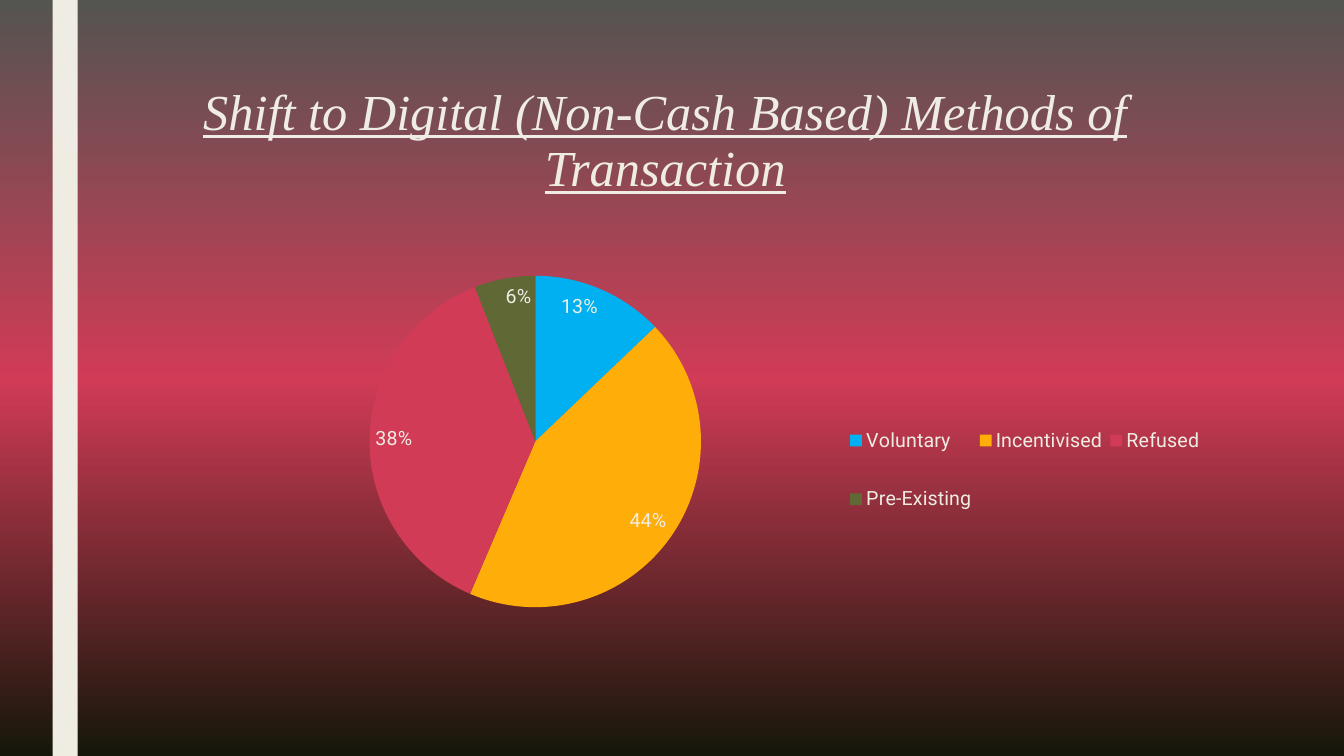
from copy import deepcopy
from dataclasses import dataclass

from lxml import etree
from pptx import Presentation
from pptx import util as u
from pptx.chart.data import CategoryChartData
from pptx.dml.color import RGBColor
from pptx.enum import chart as charts, shapes, text
from pptx.oxml.ns import qn

EMU_PER_PX = 9525  # 96 px to the inch


@dataclass(frozen=True)
class Theme:
    cream: str = "EFEDE3"
    backdrop: tuple = ("545451", "D13B56", "15170A")
    title_font: str = "Times New Roman"
    chart_font: str = "Roboto"
    title_size: int = 36
    chart_size: int = 14


THEME = Theme()

METHODS = [
    ("Voluntary", 13, "00B0F0"),
    ("Incentivised", 44, "FFAD09"),
    ("Refused ", 38, "D13B56"),
    ("Pre-Existing", 6, "606836"),
]


def px(*lengths):
    return [u.Emu(length * EMU_PER_PX) for length in lengths]


def rgb(color):
    return RGBColor.from_string(color)


def style_font(font, name, size):
    font.name = name
    font.size = u.Pt(size)
    font.color.rgb = rgb(THEME.cream)


def paint_background(slide, colors):
    """Fill the slide with evenly spaced colours from top to bottom."""
    fill = slide.background.fill
    fill.gradient()
    fill.gradient_angle = 270
    stop_list = slide.element.find(".//" + qn("a:gsLst"))
    while len(stop_list) < len(colors):
        stop_list.append(deepcopy(stop_list[-1]))
    for index, (stop, color) in enumerate(zip(fill.gradient_stops, colors)):
        stop.color.rgb = rgb(color)
        stop.position = index / (len(colors) - 1)


def add_bar(slide, box, color):
    shape = slide.shapes.add_shape(shapes.MSO_SHAPE.RECTANGLE, *px(*box))
    shape.shadow.inherit = False
    shape.fill.solid()
    shape.fill.fore_color.rgb = rgb(color)
    shape.line.fill.background()


def add_title(slide, box, wording):
    frame = slide.shapes.add_textbox(*px(*box)).text_frame
    frame.word_wrap = True
    frame.vertical_anchor = text.MSO_ANCHOR.TOP
    paragraph = frame.paragraphs[0]
    paragraph.alignment = text.PP_ALIGN.CENTER
    paragraph.line_spacing = 0.93
    run = paragraph.add_run()
    run.text = wording
    style_font(run.font, THEME.title_font, THEME.title_size)
    run.font.italic = True
    run.font.underline = True


def place(element, x, y, w, h, inner=False):
    """Set a manual layout, in fractions of the chart, on a plot or legend."""
    layout = element.find(qn("c:layout"))
    if layout is None:
        layout = etree.Element(qn("c:layout"))
        element.find(qn("c:overlay")).addprevious(layout)
    manual = etree.SubElement(layout, qn("c:manualLayout"))
    settings = [("layoutTarget", "inner")] if inner else []
    settings += [("xMode", "edge"), ("yMode", "edge"),
                 ("x", x), ("y", y), ("w", w), ("h", h)]
    for name, value in settings:
        etree.SubElement(manual, qn("c:" + name)).set("val", str(value))


def add_pie(slide, box, slices):
    data = CategoryChartData()
    data.categories = [name for name, _, _ in slices]
    data.add_series("Series 1", [value for _, value, _ in slices])
    chart = slide.shapes.add_chart(
        charts.XL_CHART_TYPE.PIE, *px(*box), data).chart
    style_font(chart.font, THEME.chart_font, THEME.chart_size)
    chart.has_title = False

    plot = chart.plots[0]
    plot.vary_by_categories = True
    for index, (_, _, color) in enumerate(slices):
        point = plot.series[0].points[index]
        point.format.fill.solid()
        point.format.fill.fore_color.rgb = rgb(color)
        point.format.line.fill.background()

    labels = plot.series[0].data_labels
    labels.show_value = False
    labels.show_percentage = True
    labels.number_format = "0%"
    labels.number_format_is_linked = False
    labels.position = charts.XL_LABEL_POSITION.INSIDE_END
    style_font(labels.font, THEME.chart_font, THEME.chart_size)

    chart.has_legend = True
    legend = chart.legend
    legend.position = charts.XL_LEGEND_POSITION.RIGHT
    legend.include_in_layout = False
    style_font(legend.font, THEME.chart_font, THEME.chart_size)

    plot_area = chart.element.find(".//" + qn("c:plotArea"))
    if plot_area.find(qn("c:layout")) is None:
        plot_area.insert(0, etree.Element(qn("c:layout")))
    place(plot_area, 0, 0.19, 0.7, 0.7, inner=True)
    place(chart.element.find(".//" + qn("c:legend")), 0.64, 0.44, 0.35, 0.32)


def main():
    presentation = Presentation()
    presentation.slide_width, presentation.slide_height = px(1280, 720)
    slide = presentation.slides.add_slide(presentation.slide_layouts[6])
    paint_background(slide, THEME.backdrop)
    add_bar(slide, (50, 0, 24, 720), THEME.cream)
    add_title(slide, (157, 77, 953, 153),
              "Shift to Digital (Non-Cash Based) Methods of Transaction")
    add_pie(slide, (157, 177, 1008, 451), METHODS)
    presentation.save("out.pptx")


if __name__ == "__main__":
    main()
